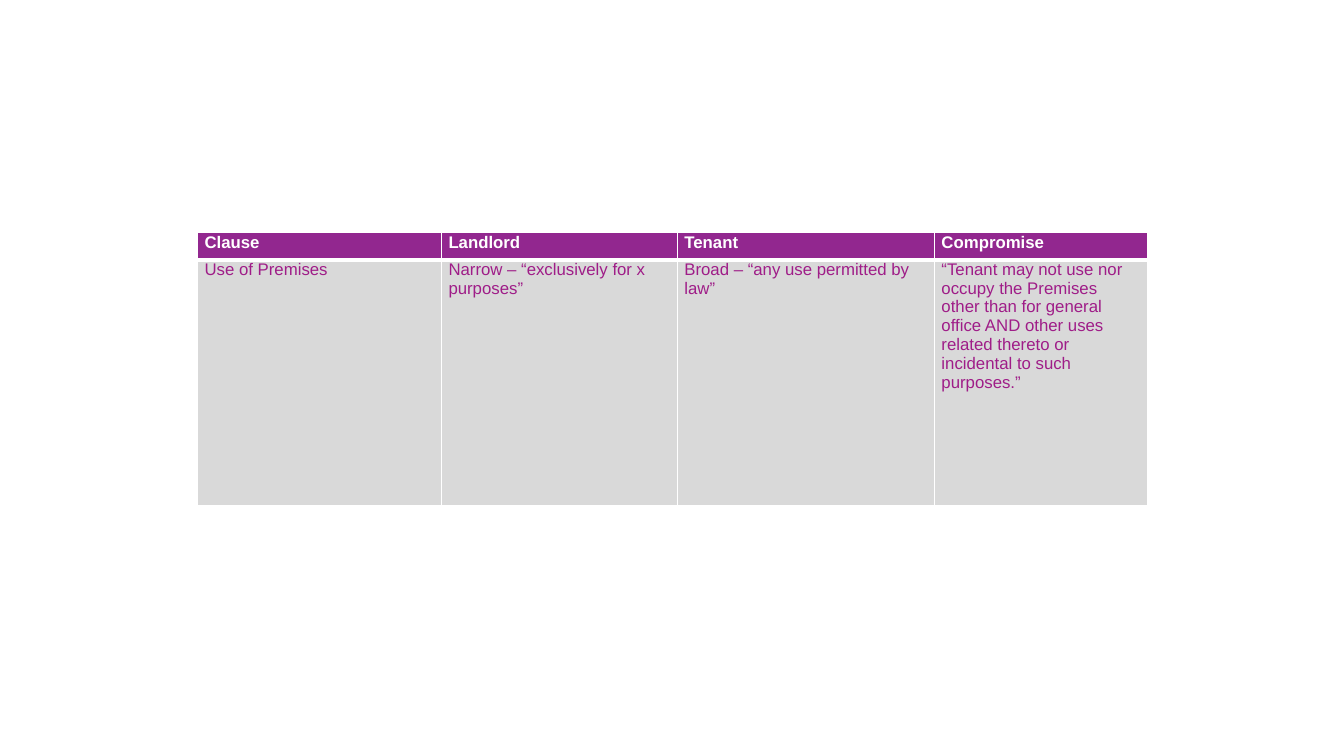
from dataclasses import dataclass

from lxml import etree
from pptx import Presentation, util as u
from pptx.dml.color import RGBColor
from pptx.oxml import ns

WHITE = RGBColor(0xFF, 0xFF, 0xFF)
PURPLE = RGBColor(0x92, 0x27, 0x8F)
PLUM = RGBColor(0x9F, 0x1D, 0x88)
GREY = RGBColor(0xD9, 0xD9, 0xD9)

WIDE, HIGH = u.Inches(13.33), u.Inches(7.5)
# Percent of the slide's width and height
LEFT, TOP = 14.7, 30.8
COLS = (18.15, 17.55, 19.13, 15.83)


@dataclass
class Row:
    share: float
    fill: RGBColor
    ink: RGBColor
    bold: bool
    rules: dict[str, float]
    texts: tuple[str, ...]


ROWS = (
    Row(3.6, PURPLE, WHITE, True, {"L": 1, "R": 1, "T": 1, "B": 3},
        ("Clause", "Landlord", "Tenant", "Compromise")),
    Row(32.53, GREY, PLUM, False, {"L": 1, "R": 1, "T": 3, "B": 1},
        ("Use of Premises",
         "Narrow – “exclusively for x purposes”",
         "Broad – “any use permitted by law”",
         "“Tenant may not use nor occupy the Premises other than for general "
         "office AND other uses related thereto or incidental to such "
         "purposes.”")),
)


def across(share: float) -> int:
    return round(WIDE * share / 100)


def down(share: float) -> int:
    return round(HIGH * share / 100)


def rule(cell, side: str, width: float) -> None:
    """Draw a white border on one side (L, R, T or B) of a cell."""
    props = cell._tc.get_or_add_tcPr()
    line = etree.SubElement(props, ns.qn(f"a:ln{side}"), w=str(u.Pt(width)))
    solid = etree.SubElement(line, ns.qn("a:solidFill"))
    etree.SubElement(solid, ns.qn("a:srgbClr"), val=str(WHITE))


def write(cell, row: Row, words: str) -> None:
    for side, width in row.rules.items():
        rule(cell, side, width)
    cell.fill.solid()
    cell.fill.fore_color.rgb = row.fill
    cell.margin_left = cell.margin_right = u.Inches(0.07)
    cell.margin_top = cell.margin_bottom = 0
    cell.text = words
    font = cell.text_frame.paragraphs[0].font
    font.name, font.size, font.bold = "Arial", u.Pt(12), row.bold
    font.color.rgb = row.ink


def main() -> None:
    deck = Presentation()
    deck.slide_width, deck.slide_height = WIDE, HIGH
    slide = deck.slides.add_slide(deck.slide_layouts.get_by_name("Blank"))
    table = slide.shapes.add_table(
        len(ROWS), len(COLS), across(LEFT), down(TOP), across(sum(COLS)),
        down(sum(row.share for row in ROWS))).table
    table.horz_banding = False
    for col, share in zip(table.columns, COLS):
        col.width = across(share)
    for line, row in zip(table.rows, ROWS):
        line.height = down(row.share)
        for cell, words in zip(line.cells, row.texts):
            write(cell, row, words)
    deck.save("out.pptx")


if __name__ == "__main__":
    main()
